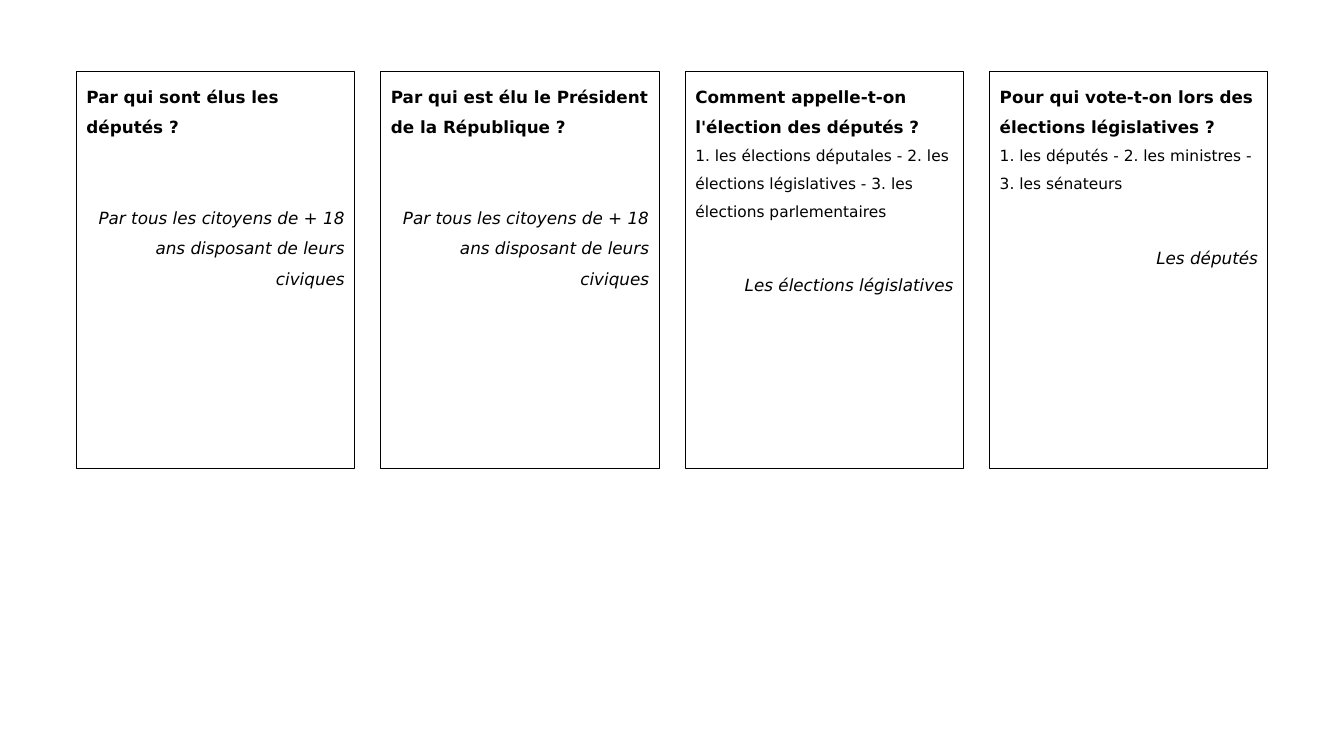
from pptx import Presentation
from pptx.dml.color import RGBColor
from pptx.enum.shapes import MSO_SHAPE
from pptx.enum.text import MSO_ANCHOR, PP_ALIGN
from pptx.util import Pt

RECTANGLE = MSO_SHAPE.RECTANGLE
TOP = MSO_ANCHOR.TOP
LEFT, RIGHT = PP_ALIGN.LEFT, PP_ALIGN.RIGHT

COLORS = {"card": "FFFFFF", "ink": "000000"}
FONT = "DejaVu Sans"
CARD_LEFT, CARD_TOP = 54.72, 51.12
CARD_WIDTH, CARD_HEIGHT = 198.72, 283.68
CARD_STEP = 217.44

CITIZENS = "Par tous les citoyens de + 18 ans disposant de leurs civiques"
CARDS = [
    ("Par qui sont élus les députés ?", None, CITIZENS),
    ("Par qui est élu le Président de la République ?", None, CITIZENS),
    (
        "Comment appelle-t-on l'élection des députés ?",
        "1. les élections députales - 2. les élections législatives - 3. les élections parlementaires",
        "Les élections législatives",
    ),
    (
        "Pour qui vote-t-on lors des élections législatives ?",
        "1. les députés - 2. les ministres - 3. les sénateurs",
        "Les députés",
    ),
]


def format_paragraph(paragraph, text, size, bold=False, italic=False, align=LEFT, before=0):
    paragraph.text = text
    paragraph.alignment = align
    paragraph.line_spacing = 1.5
    paragraph.space_before = Pt(before)
    font = paragraph.runs[0].font
    font.name = FONT
    font.size = Pt(size)
    font.bold = bold
    font.italic = italic
    font.color.rgb = RGBColor.from_string(COLORS["ink"])


presentation = Presentation()
presentation.slide_width = Pt(960)
presentation.slide_height = Pt(540)
slide = presentation.slides.add_slide(presentation.slide_layouts[6])

for index, (question, choices, answer) in enumerate(CARDS):
    card = slide.shapes.add_shape(
        RECTANGLE,
        Pt(CARD_LEFT + index * CARD_STEP),
        Pt(CARD_TOP),
        Pt(CARD_WIDTH),
        Pt(CARD_HEIGHT),
    )
    card.name = f"Question {index + 1}"
    card.shadow.inherit = False
    card.fill.solid()
    card.fill.fore_color.rgb = RGBColor.from_string(COLORS["card"])
    card.line.color.rgb = RGBColor.from_string(COLORS["ink"])
    card.line.width = Pt(0.75)

    text_frame = card.text_frame
    text_frame.word_wrap = True
    text_frame.vertical_anchor = TOP
    format_paragraph(text_frame.paragraphs[0], question, 12, bold=True)
    if choices:
        format_paragraph(text_frame.add_paragraph(), choices, 11)
    answer_gap = 32 if choices else 43.5
    format_paragraph(
        text_frame.add_paragraph(), answer, 12, italic=True, align=RIGHT, before=answer_gap
    )

presentation.save("out.pptx")
